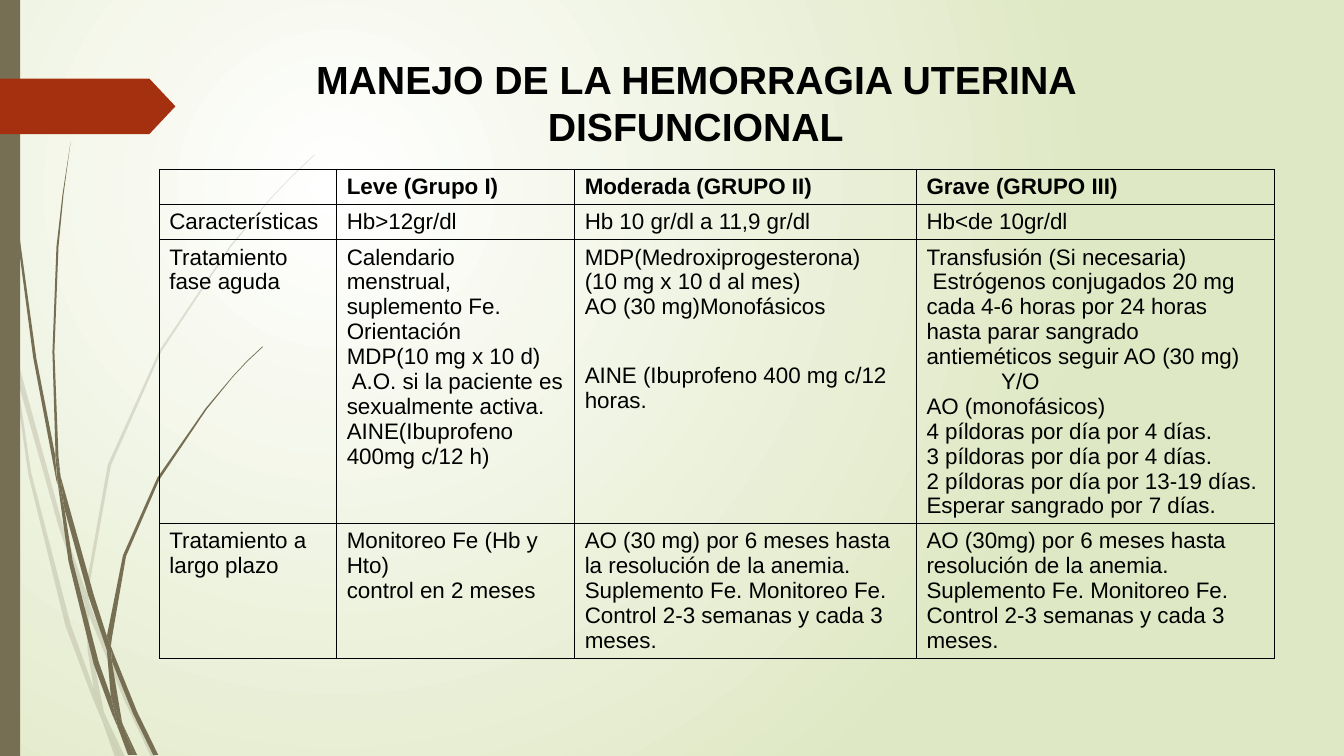
from collections import namedtuple

from pptx import Presentation
from pptx.dml.color import RGBColor
from pptx.enum.shapes import MSO_SHAPE as Shape
from pptx.enum.text import MSO_ANCHOR as Anchor, PP_ALIGN as Align
from pptx.oxml import parse_xml
from pptx.oxml.ns import nsdecls, qn
from pptx.util import Inches, Pt

Box = namedtuple("Box", "left top width height")
WIDTH, HEIGHT = 13.33, 7.5
FONT = "Arial"
BLACK, OLIVE, RUST = "000000", "766F54", "A53010"
HUNDREDTH = 9144  # EMU in a hundredth of an inch

# Blade outlines, in hundredths of an inch from the corner of the page
PALE_BLADES = [
    [(11, 350), (9, 322), (0, 282), (0, 299), (10, 344)],
    [(58, 522), (84, 599), (85, 586), (62, 520), (14, 345), (17, 376)],
    [(92, 607), (88, 596), (88, 610), (123, 694), (150, 751), (155, 751), (127, 692)],
    [(119, 751), (124, 751), (105, 711)],
    [(93, 683), (70, 619), (31, 469), (17, 376), (11, 350), (28, 470), (65, 621),
     (92, 693), (101, 714), (99, 707)],
    [(84, 599), (87, 646), (93, 683), (96, 692), (105, 711), (103, 706), (91, 646),
     (88, 610), (88, 608)],
    [(88, 584), (110, 462), (160, 349), (229, 245), (268, 198), (290, 175), (312, 154),
     (312, 153), (289, 175), (268, 197), (228, 244), (158, 348), (107, 461), (85, 584),
     (85, 586), (88, 596)],
    [(101, 714), (114, 751), (119, 751)],
    [(88, 608), (88, 610), (88, 596), (85, 586), (84, 599)],
    [(96, 692), (93, 683), (99, 707), (101, 714), (119, 751), (105, 711)],
]
DARK_BLADES = [
    [(7, 110), (17, 233), (33, 355), (56, 477), (57, 481), (55, 457), (55, 453),
     (36, 355), (19, 232), (8, 109), (5, 48), (4, 0), (3, 0), (4, 48)],
    [(88, 592), (106, 645), (106, 633), (106, 631), (93, 590), (60, 472), (64, 505)],
    [(113, 649), (110, 641), (111, 656), (132, 708), (152, 749), (157, 749), (136, 706)],
    [(110, 691), (98, 657), (72, 556), (64, 505), (57, 477), (68, 557), (93, 659),
     (111, 708), (117, 722), (116, 717)],
    [(60, 472), (58, 453), (54, 349), (58, 245), (63, 193), (70, 141), (62, 193),
     (56, 245), (52, 349), (55, 449), (60, 472)],
    [(133, 749), (136, 749), (122, 719)],
    [(57, 477), (64, 505), (60, 472), (55, 449), (55, 453)],
    [(111, 633), (125, 552), (158, 476), (205, 406), (231, 374), (245, 359), (261, 344),
     (260, 344), (245, 358), (231, 373), (204, 405), (156, 474), (122, 551), (106, 631),
     (110, 641)],
    [(117, 722), (127, 749), (131, 749)],
    [(106, 645), (110, 691), (116, 706), (122, 719), (121, 716), (111, 656), (109, 651)],
    [(106, 645), (109, 651), (111, 656), (110, 641), (106, 631), (106, 633)],
    [(116, 706), (110, 691), (116, 717), (117, 722), (130, 749), (133, 749), (122, 719)],
]

# Cell text: \n starts a paragraph, \v breaks a line within it
CELLS = [
    ["", "Leve (Grupo I)", "Moderada (GRUPO II)", "Grave (GRUPO III)"],
    ["Características", "Hb>12gr/dl", "Hb 10 gr/dl a 11,9 gr/dl", "Hb<de 10gr/dl"],
    ["Tratamiento fase aguda",
     "Calendario menstrual, suplemento Fe.\nOrientación\nMDP(10 mg x 10 d)\n"
     " A.O. si la paciente es sexualmente activa.\nAINE(Ibuprofeno 400mg c/12 h)",
     "MDP(Medroxiprogesterona)\n(10 mg x 10 d al mes)\nAO (30 mg)Monofásicos\n"
     "AINE (Ibuprofeno 400 mg c/12 horas.",
     "Transfusión (Si necesaria)\n Estrógenos conjugados 20 mg cada 4-6 horas por 24 horas "
     "hasta parar sangrado antieméticos seguir AO (30 mg)\nY/O\n"
     "AO (monofásicos)\v4 píldoras por día por 4 días.\v3 píldoras por día por 4 días.\v"
     "2 píldoras por día por 13-19 días.\vEsperar sangrado por 7 días."],
    ["Tratamiento a largo plazo",
     "Monitoreo Fe (Hb y Hto)\vcontrol en 2 meses",
     "AO (30 mg) por 6 meses hasta la resolución de la anemia. Suplemento Fe. "
     "Monitoreo Fe. Control 2-3 semanas y cada 3 meses.",
     "AO (30mg) por 6 meses hasta resolución de la anemia. Suplemento Fe. "
     "Monitoreo Fe. Control 2-3 semanas y cada 3 meses."],
]
COLUMN_WIDTHS = [1.76, 2.36, 3.39, 3.55]
ROW_HEIGHTS = [0.35, 0.35, 2.81, 1.34]


def color(hex_text):
    return RGBColor.from_string(hex_text)


def emu(box):
    return [Inches(length) for length in box]


def paint(shape, fill, alpha=100):
    shape.shadow.inherit = False
    shape.fill.solid()
    shape.fill.fore_color.rgb = color(fill)
    shape.line.fill.background()
    if alpha < 100:
        tint = shape.fill._xPr.find(".//" + qn("a:srgbClr"))
        tint.append(parse_xml(f'<a:alpha {nsdecls("a")} val="{alpha * 1000}"/>'))


def set_font(para, size, bold):
    para.font.name, para.font.size, para.font.bold = FONT, Pt(size), bold
    para.font.color.rgb = color(BLACK)


def add_background(page):
    fill = page.background.fill
    fill.gradient()
    for stop, shade in zip(fill.gradient_stops, ("FFFFFF", "DFE8C4")):
        stop.color.rgb = color(shade)
    fill.gradient_stops[0].position, fill.gradient_stops[1].position = 0, 1
    linear = page._element.find(".//" + qn("a:lin"))
    radial = parse_xml(f'<a:path {nsdecls("a")} path="circle"><a:fillToRect l="50000" '
                       't="50000" r="100000" b="100000"/></a:path>')
    linear.getparent().replace(linear, radial)


def add_grass(page, box, blades, alpha):
    for start, *rest in blades:
        builder = page.shapes.build_freeform(*start, scale=HUNDREDTH)
        builder.add_line_segments(rest, close=True)
        paint(builder.convert_to_shape(Inches(box.left), Inches(box.top)), OLIVE, alpha)


def add_side_band(page, box):
    # Strip along the edge, with an arrow tab across it
    strip = Box(box.left, box.top, 0.2, box.height)
    paint(page.shapes.add_shape(Shape.RECTANGLE, *emu(strip)), OLIVE)
    tab = Box(box.left, box.top + 0.78, box.width, 0.55)
    arrow = page.shapes.add_shape(Shape.PENTAGON, *emu(tab))
    arrow.adjustments[0] = 0.47
    paint(arrow, RUST)


def add_title(page, box, text):
    frame = page.shapes.add_textbox(*emu(box)).text_frame
    frame.word_wrap = True
    frame.vertical_anchor = Anchor.MIDDLE
    para = frame.paragraphs[0]
    para.text = text
    para.alignment = Align.CENTER
    set_font(para, 28, True)


def style_cell(cell, bold):
    properties = cell._tc.get_or_add_tcPr()
    for side in ("lnL", "lnR", "lnT", "lnB"):
        properties.append(parse_xml(
            f'<a:{side} {nsdecls("a")} w="9525"><a:solidFill><a:srgbClr val="{BLACK}"/>'
            f'</a:solidFill></a:{side}>'))
    cell.fill.background()
    for para in cell.text_frame.paragraphs:
        if para.text == "Y/O":
            para._p.get_or_add_pPr().set("marL", str(Inches(0.74)))
        elif para.text.startswith("AINE ("):
            para.space_before = Pt(31)
        set_font(para, 16, bold)


def add_treatment_table(page, box):
    table = page.shapes.add_table(len(CELLS), len(CELLS[0]), *emu(box)).table
    table.first_row = table.horz_banding = False
    for column, width in zip(table.columns, COLUMN_WIDTHS):
        column.width = Inches(width)
    for row, height, texts in zip(table.rows, ROW_HEIGHTS, CELLS):
        row.height = Inches(height)
        for cell, text in zip(row.cells, texts):
            cell.text = text
            style_cell(cell, bold=texts is CELLS[0])


def main():
    deck = Presentation()
    deck.slide_width, deck.slide_height = Inches(WIDTH), Inches(HEIGHT)
    page = deck.slides.add_slide(deck.slide_layouts[6])
    whole = Box(0, 0, WIDTH, HEIGHT)
    add_background(page)
    add_grass(page, whole, PALE_BLADES, 20)
    add_grass(page, whole, DARK_BLADES, 100)
    add_side_band(page, Box(0, 0, 1.74, HEIGHT))
    add_treatment_table(page, Box(1.58, 1.68, sum(COLUMN_WIDTHS), sum(ROW_HEIGHTS)))
    add_title(page, Box(2.15, 0.5, 9.5, 1.04),
              "MANEJO DE LA HEMORRAGIA UTERINA DISFUNCIONAL")
    deck.save("out.pptx")


if __name__ == "__main__":
    main()
